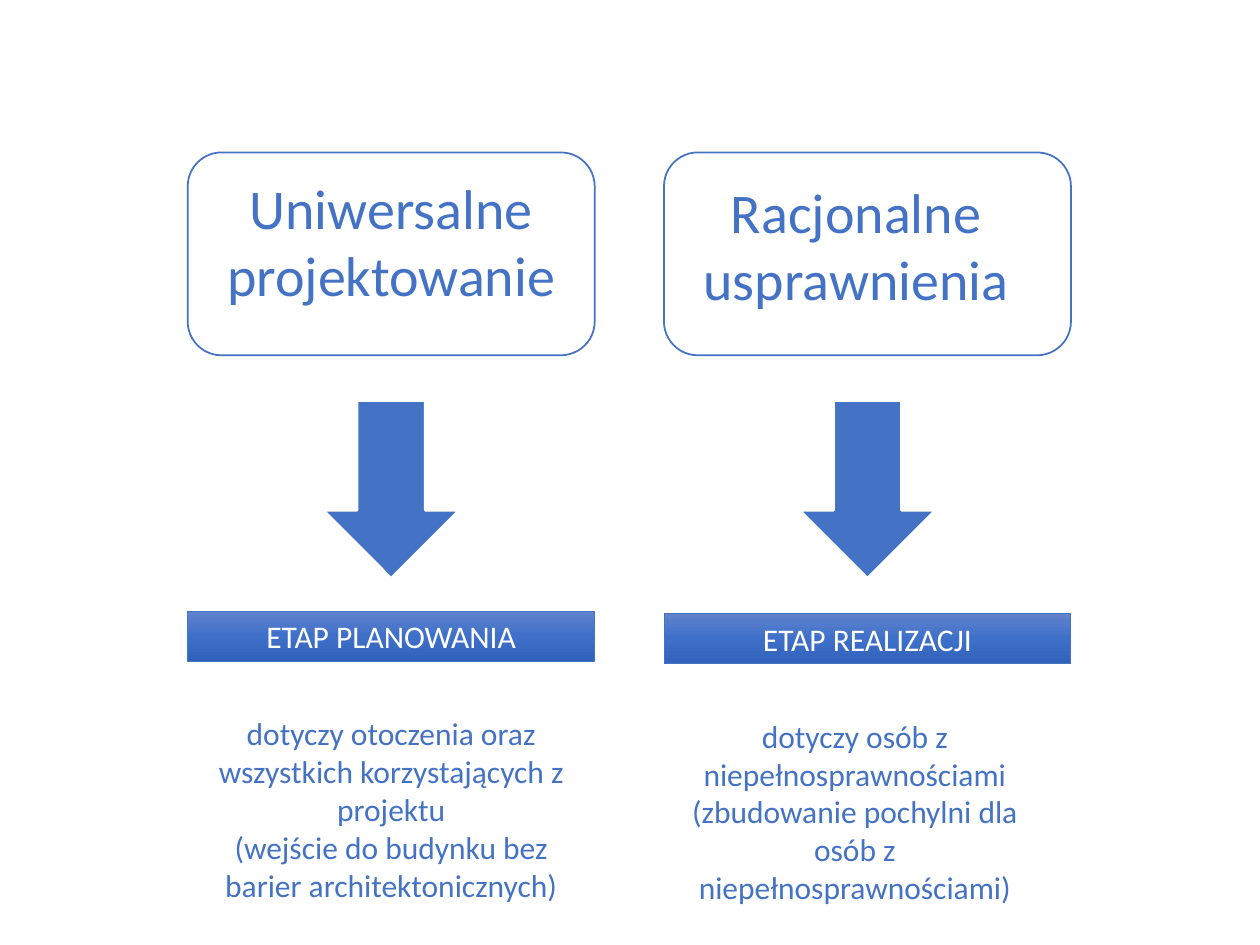
from copy import deepcopy

from pptx import Presentation
from pptx.dml.color import RGBColor
from pptx.enum import shapes, text
from pptx.oxml.ns import qn
from pptx.util import Inches, Pt

# Content: one entry per column; boxes are (left, top, width, height) in inches
COLUMNS = [
    {
        "left": 1.49,
        "heading": ("Uniwersalne projektowanie", (1.04, 1.33, 4.13, 1.18)),
        "stage": ("ETAP PLANOWANIA", 4.85),
        "details": (["dotyczy otoczenia oraz wszystkich korzystających z projektu",
                     "(wejście do budynku bez barier architektonicznych)"],
                    (1.49, 5.62, 3.23, 1.62)),
    },
    {
        "left": 5.27,
        "heading": ("Racjonalne usprawnienia", (5.44, 1.36, 2.71, 1.18)),
        "stage": ("ETAP REALIZACJI", 4.87),
        "details": (["dotyczy osób z niepełnosprawnościami",
                     "(zbudowanie pochylni dla osób z niepełnosprawnościami)"],
                    (5.17, 5.64, 3.23, 1.62)),
    },
]
THEME = {
    "font": "Calibri", "heading": 32, "body": 18,
    "blue": "4472C4", "white": "FFFFFF",
    "gradient": [(0, "6183CB"), (0.5, "3E70CA"), (1, "3062BB")],
}
COL_W = 3.23
ARROW_W = 1.08


def rgb(name):
    return RGBColor.from_string(THEME.get(name, name))


def add_shape(slide, kind, box, fill, line, line_width):
    sp = slide.shapes.add_shape(kind, *map(Inches, box))
    sp.shadow.inherit = False
    if fill:
        sp.fill.solid()
        sp.fill.fore_color.rgb = rgb(fill)
    sp.line.color.rgb = rgb(line)
    sp.line.width = Pt(line_width)
    return sp


def fill_gradient(sp, stops):
    sp.fill.gradient()
    sp.fill.gradient_angle = 270  # counter-clockwise: top to bottom
    gs_list = sp._element.spPr.find(qn("a:gradFill")).find(qn("a:gsLst"))
    while len(gs_list) < len(stops):
        gs_list.append(deepcopy(gs_list[0]))
    for stop, (position, color) in zip(sp.fill.gradient_stops, stops):
        stop.position = position
        stop.color.rgb = rgb(color)


def write(sp, paragraphs, size="body", color="blue", anchor=text.MSO_ANCHOR.TOP):
    tf = sp.text_frame
    tf.word_wrap = True
    tf.vertical_anchor = anchor
    for i, line in enumerate(paragraphs):
        p = tf.add_paragraph() if i else tf.paragraphs[0]
        p.alignment = text.PP_ALIGN.CENTER
        r = p.add_run()
        r.text = line
        r.font.name = THEME["font"]
        r.font.size = Pt(THEME[size])
        r.font.color.rgb = rgb(color)


def add_column(slide, col):
    left = col["left"]
    kinds = shapes.MSO_SHAPE

    # Heading frame and arrow centred below it
    add_shape(slide, kinds.ROUNDED_RECTANGLE, (left, 1.21, COL_W, 1.61),
              "white", "blue", 1)
    add_shape(slide, kinds.DOWN_ARROW,
              (left + (COL_W - ARROW_W) / 2, 3.18, ARROW_W, 1.41),
              "blue", "white", 1.5)

    # Stage bar
    label, top = col["stage"]
    bar = add_shape(slide, kinds.RECTANGLE, (left, top, COL_W, 0.4),
                    None, "blue", 0.5)
    fill_gradient(bar, THEME["gradient"])
    write(bar, [label], color="white")

    # Heading and details text
    heading, box = col["heading"]
    write(slide.shapes.add_textbox(*map(Inches, box)), [heading], size="heading")
    details, box = col["details"]
    write(slide.shapes.add_textbox(*map(Inches, box)), details)


def main():
    prs = Presentation()
    prs.slide_width, prs.slide_height = Inches(10), Inches(7.5)
    slide = prs.slides.add_slide(prs.slide_layouts[6])
    for col in COLUMNS:
        add_column(slide, col)
    prs.save("out.pptx")


if __name__ == "__main__":
    main()
